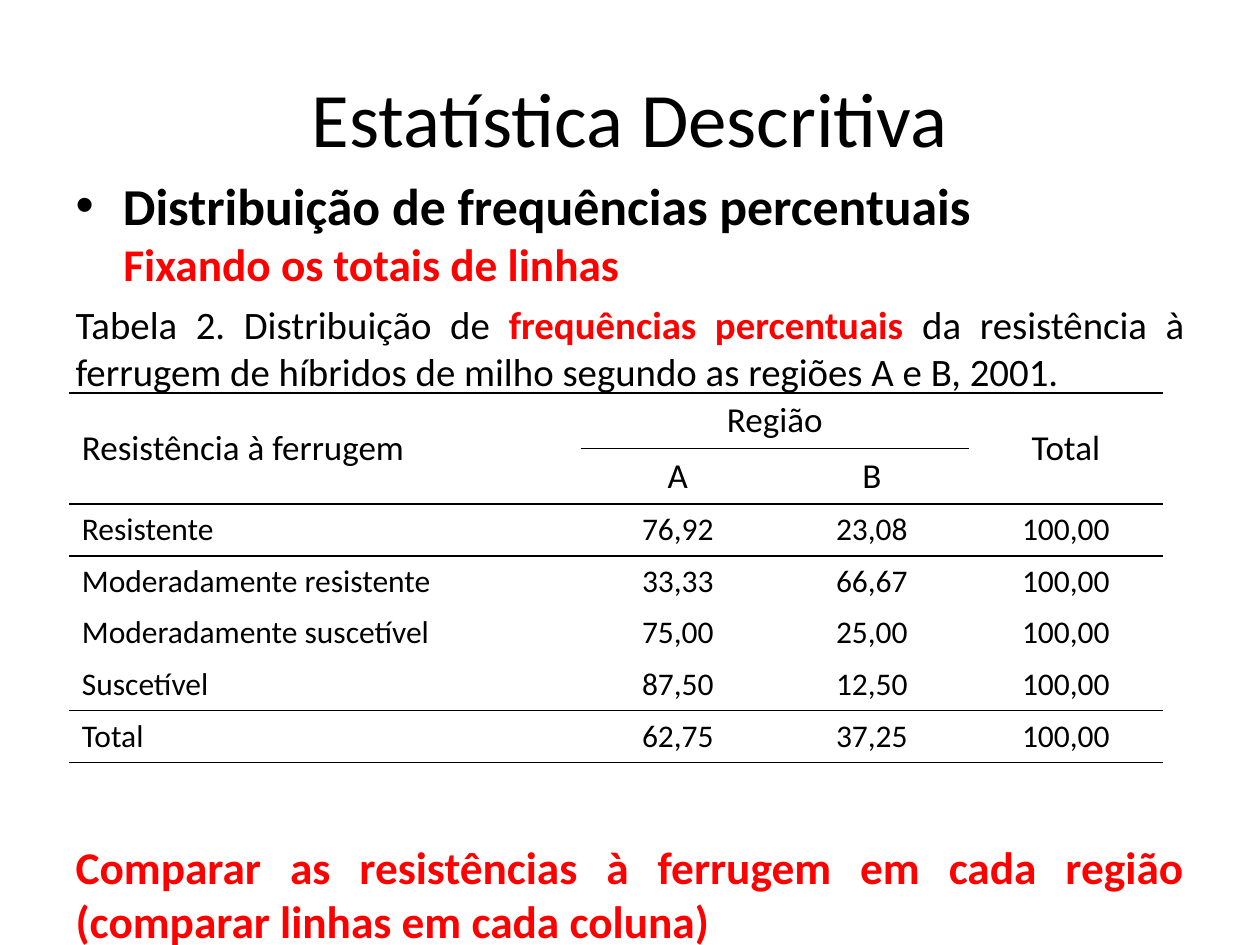
import pptx
import pptx.dml.color
import pptx.enum.text
import pptx.oxml
import pptx.oxml.ns
import pptx.util
from pptx.util import Inches, Pt

BLACK = pptx.dml.color.RGBColor(0x00, 0x00, 0x00)
RED = pptx.dml.color.RGBColor(0xFF, 0x00, 0x00)
FONT = "Calibri"
ALIGN = pptx.enum.text.PP_ALIGN
ANCHOR = pptx.enum.text.MSO_ANCHOR
NO_STYLE = "{2D5ABB26-0587-4C30-8999-92F81FD0307C}"

COLUMN_WIDTHS = [4.06, 1.54, 1.54, 1.54]
HEADER_ROWS = 2
HEADER_HEIGHT, DATA_HEIGHT = 0.44, 0.41
ROWS = [
    ["Resistência à ferrugem", "Região", "", "Total"],
    ["", "A", "B", ""],
    ["Resistente", "76,92", "23,08", "100,00"],
    ["Moderadamente resistente", "33,33", "66,67", "100,00"],
    ["Moderadamente suscetível", "75,00", "25,00", "100,00"],
    ["Suscetível", "87,50", "12,50", "100,00"],
    ["Total", "62,75", "37,25", "100,00"],
]


def style_font(font, size, color=BLACK, bold=False):
    font.name = FONT
    font.size = Pt(size)
    font.bold = bold
    font.color.rgb = color


def place(placeholder, left, top, width, height):
    placeholder.left, placeholder.top = Inches(left), Inches(top)
    placeholder.width, placeholder.height = Inches(width), Inches(height)
    placeholder.text_frame.auto_size = pptx.enum.text.MSO_AUTO_SIZE.NONE


def remove_bullet(paragraph, margin=0):
    properties = paragraph._p.get_or_add_pPr()
    properties.set("marL", str(Inches(margin)))
    properties.set("indent", "0")
    properties.append(pptx.oxml.parse_xml(
        f"<a:buNone {pptx.oxml.ns.nsdecls('a')}/>"))


def add_justified(frame, space_before, margin=0):
    paragraph = frame.add_paragraph()
    paragraph.alignment = ALIGN.JUSTIFY
    paragraph.space_before = Pt(space_before)
    remove_bullet(paragraph, margin)
    return paragraph


def add_title(slide):
    title = slide.shapes.title
    place(title, 0.5, 0.3, 9, 1.25)
    title.text_frame.text = "Estatística Descritiva"
    style_font(title.text_frame.paragraphs[0].font, 44)


def add_body(slide):
    body = slide.placeholders[1]
    place(body, 0.5, 1.33, 9, 5.94)
    frame = body.text_frame

    topic = frame.paragraphs[0]
    topic.text = "Distribuição de frequências percentuais"
    style_font(topic.font, 29.6, bold=True)

    subtopic = add_justified(frame, 0, margin=0.38)
    subtopic.text = "Fixando os totais de linhas"
    style_font(subtopic.font, 25.9, RED, bold=True)

    caption = add_justified(frame, 6)
    for text, color, bold in [
        ("Tabela 2. Distribuição de ", BLACK, False),
        ("frequências percentuais ", RED, True),
        ("da resistência à ferrugem de híbridos de milho "
         "segundo as regiões A e B, 2001.", BLACK, False),
    ]:
        run = caption.add_run()
        run.text = text
        style_font(run.font, 22.2, color, bold)

    # The space before the conclusion leaves room for the table
    conclusion = add_justified(frame, 254)
    conclusion.text = ("Comparar as resistências à ferrugem em cada região "
                       "(comparar linhas em cada coluna)")
    style_font(conclusion.font, 25.9, RED, bold=True)


def add_border(cell, side):
    properties = cell._tc.get_or_add_tcPr()
    border = pptx.oxml.parse_xml(
        f'<a:{side} {pptx.oxml.ns.nsdecls("a")} w="{Pt(1)}">'
        f'<a:solidFill><a:srgbClr val="{BLACK}"/></a:solidFill></a:{side}>')
    # Top borders come before bottom borders, and both before the fill
    top_border = properties.find(pptx.oxml.ns.qn("a:lnT"))
    properties.insert(0 if top_border is None else 1, border)


def rule_below(table, row, columns):
    """Draw a rule under a row; row -1 is the top edge of the table."""
    for column in columns:
        if row + 1 < len(table.rows):
            add_border(table.cell(row + 1, column), "lnT")
        if row >= 0:
            add_border(table.cell(row, column), "lnB")


def fill_cell(cell, text, size, alignment, anchor):
    cell.fill.background()
    cell.vertical_anchor = anchor
    paragraph = cell.text_frame.paragraphs[0]
    paragraph.text = text
    paragraph.alignment = alignment
    style_font(paragraph.font, size)


def add_frequency_table(slide):
    data_rows = len(ROWS) - HEADER_ROWS
    height = HEADER_ROWS * HEADER_HEIGHT + data_rows * DATA_HEIGHT
    table = slide.shapes.add_table(
        len(ROWS), len(COLUMN_WIDTHS), Inches(0.55), Inches(3.12),
        Inches(sum(COLUMN_WIDTHS)), Inches(height)).table
    table.first_row = table.horz_banding = False
    table._tbl.tblPr.find(pptx.oxml.ns.qn("a:tableStyleId")).text = NO_STYLE

    for column, width in zip(table.columns, COLUMN_WIDTHS):
        column.width = Inches(width)
    for r, texts in enumerate(ROWS):
        is_header = r < HEADER_ROWS
        table.rows[r].height = Inches(HEADER_HEIGHT if is_header else DATA_HEIGHT)
        for c, text in enumerate(texts):
            fill_cell(table.cell(r, c), text, 20 if is_header else 18,
                      ALIGN.LEFT if c == 0 else ALIGN.CENTER,
                      ANCHOR.MIDDLE if r == 0 and c in (0, 3) else ANCHOR.TOP)

    # Header spans
    table.cell(0, 0).merge(table.cell(1, 0))
    table.cell(0, 1).merge(table.cell(0, 2))
    table.cell(0, 3).merge(table.cell(1, 3))

    # Horizontal rules, the one under the region covering only A and B
    all_columns = range(len(COLUMN_WIDTHS))
    last = len(ROWS) - 1
    for row in (-1, HEADER_ROWS - 1, last - 1, last):
        rule_below(table, row, all_columns)
    rule_below(table, 0, (1, 2))


def main():
    presentation = pptx.Presentation()
    presentation.slide_width = Inches(10)
    presentation.slide_height = Inches(7.5)
    slide = presentation.slides.add_slide(presentation.slide_layouts[1])
    add_title(slide)
    add_body(slide)
    add_frequency_table(slide)
    presentation.save("out.pptx")


if __name__ == "__main__":
    main()
